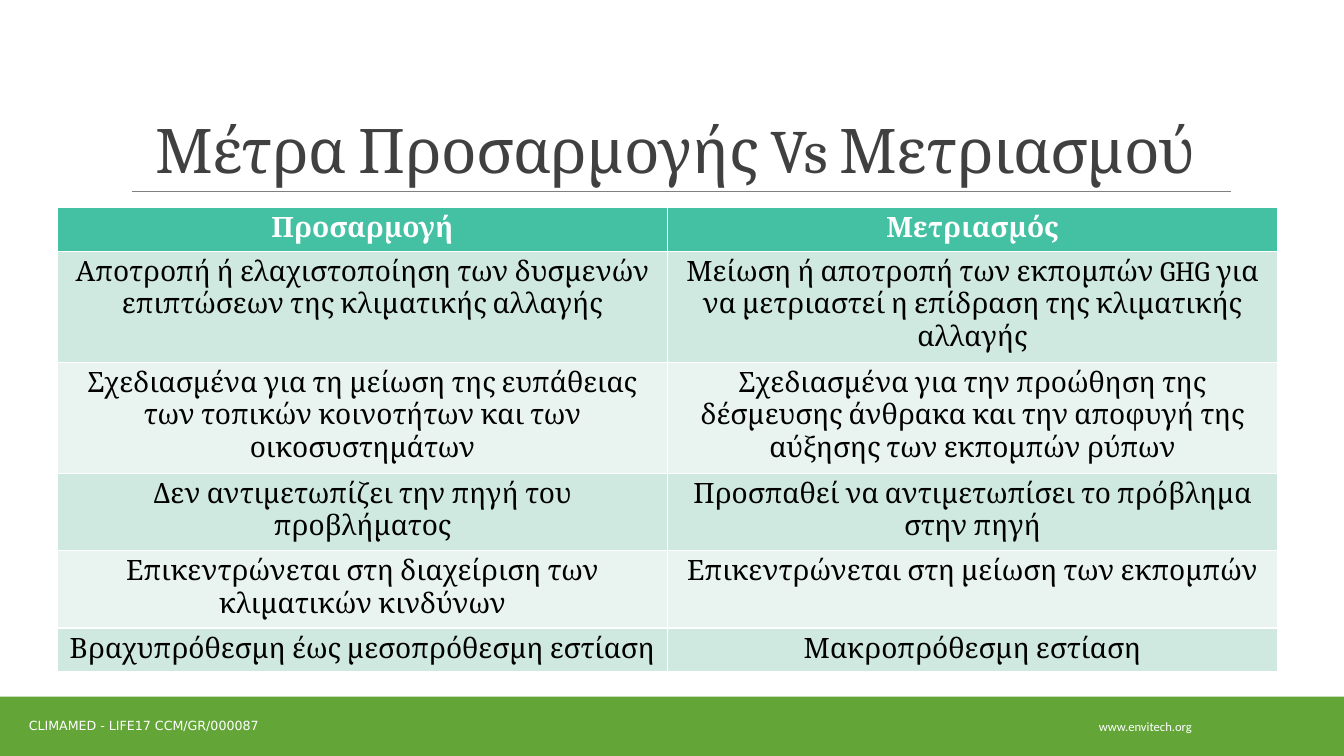
"""Build a slide comparing climate adaptation and mitigation measures."""
from lxml.etree import SubElement
from pptx import Presentation
from pptx.dml.color import RGBColor
from pptx.enum.shapes import MSO_CONNECTOR, MSO_SHAPE
from pptx.enum.text import MSO_ANCHOR, MSO_AUTO_SIZE, PP_ALIGN
from pptx.oxml.ns import qn
from pptx.util import Inches, Pt

WHITE = RGBColor(0xFF, 0xFF, 0xFF)
BLACK = RGBColor(0x00, 0x00, 0x00)
TITLE_GRAY = RGBColor(0x40, 0x40, 0x40)
RULE_GRAY = RGBColor(0x80, 0x80, 0x80)
FOOTER_GREEN = RGBColor(0x63, 0xA5, 0x37)
HEADER_TEAL = RGBColor(0x44, 0xC1, 0xA3)
BAND_DARK = RGBColor(0xCF, 0xE9, 0xE0)
BAND_LIGHT = RGBColor(0xE9, 0xF4, 0xF0)

MEASURES = [
    ("Προσαρμογή", "Μετριασμός"),
    ("Αποτροπή ή ελαχιστοποίηση των δυσμενών επιπτώσεων της κλιματικής αλλαγής",
     "Μείωση ή αποτροπή των εκπομπών GHG για να μετριαστεί η επίδραση της κλιματικής αλλαγής"),
    ("Σχεδιασμένα για τη μείωση της ευπάθειας των τοπικών κοινοτήτων και των οικοσυστημάτων",
     "Σχεδιασμένα για την προώθηση της δέσμευσης άνθρακα και την αποφυγή της αύξησης των εκπομπών ρύπων"),
    ("Δεν αντιμετωπίζει την πηγή του προβλήματος",
     "Προσπαθεί να αντιμετωπίσει το πρόβλημα στην πηγή"),
    ("Επικεντρώνεται στη διαχείριση των κλιματικών κινδύνων",
     "Επικεντρώνεται στη μείωση των εκπομπών"),
    ("Βραχυπρόθεσμη έως μεσοπρόθεσμη εστίαση", "Μακροπρόθεσμη εστίαση"),
]
FOOTERS = [
    ("www.envitech.org", "Calibri", 10.13, 7.01, 2.46),
    ("CLIMAMED - LIFE17 CCM/GR/000087", "DejaVu Sans", -0.16, 7, 3.17),
]


def write_text(text_frame, text, color, **font_format):
    """Write one centred run and apply its font values."""
    paragraph = text_frame.paragraphs[0]
    paragraph.alignment = PP_ALIGN.CENTER
    run = paragraph.add_run()
    run.text = text
    run.font.color.rgb = color
    for name, value in font_format.items():
        setattr(run.font, name, value)
    return run


presentation = Presentation()
presentation.slide_width = Inches(13.33)
presentation.slide_height = Inches(7.5)
slide = presentation.slides.add_slide(presentation.slide_layouts[5])

title = slide.shapes.title
title_place = {"left": 1.2, "top": 0.31, "width": 11, "height": 1.59}
for name, value in title_place.items():
    setattr(title, name, Inches(value))
title.text_frame.auto_size = MSO_AUTO_SIZE.NONE
title.text_frame.vertical_anchor = MSO_ANCHOR.BOTTOM
title_run = write_text(title.text_frame, "Μέτρα Προσαρμογής Vs Μετριασμού",
                       TITLE_GRAY, name="Cambria", size=Pt(44))
title_run._r.get_or_add_rPr().set("spc", "-50")
title.text_frame.paragraphs[0].line_spacing = 0.85

title_rule = slide.shapes.add_connector(
    MSO_CONNECTOR.STRAIGHT, Inches(1.31), Inches(1.9), Inches(12.21), Inches(1.9))
title_rule.line.color.rgb = RULE_GRAY
title_rule.line.width = Pt(0.5)
SubElement(title_rule._element.spPr, qn("a:effectLst"))

footer_band = slide.shapes.add_shape(
    MSO_SHAPE.RECTANGLE, 0, Inches(6.91), presentation.slide_width, Inches(0.59))
footer_band.shadow.inherit = False
footer_band.fill.solid()
footer_band.fill.fore_color.rgb = FOOTER_GREEN
footer_band.line.fill.background()

for text, font_name, left, top, width in FOOTERS:
    footer = slide.shapes.add_textbox(Inches(left), Inches(top), Inches(width), Inches(0.4))
    footer.text_frame.word_wrap = True
    footer.text_frame.vertical_anchor = MSO_ANCHOR.MIDDLE
    write_text(footer.text_frame, text, WHITE, name=font_name, size=Pt(9))

table = slide.shapes.add_table(
    len(MEASURES), 2, Inches(0.57), Inches(2.06),
    Inches(12.1), Inches(0.41 * len(MEASURES))).table
for row_index, measures in enumerate(MEASURES):
    is_header = row_index == 0
    band = BAND_DARK if row_index % 2 else BAND_LIGHT
    for column_index, text in enumerate(measures):
        cell = table.cell(row_index, column_index)
        cell.fill.solid()
        cell.fill.fore_color.rgb = HEADER_TEAL if is_header else band
        write_text(cell.text_frame, text, WHITE if is_header else BLACK,
                   name="Cambria", size=Pt(20), bold=is_header)

presentation.save("out.pptx")
